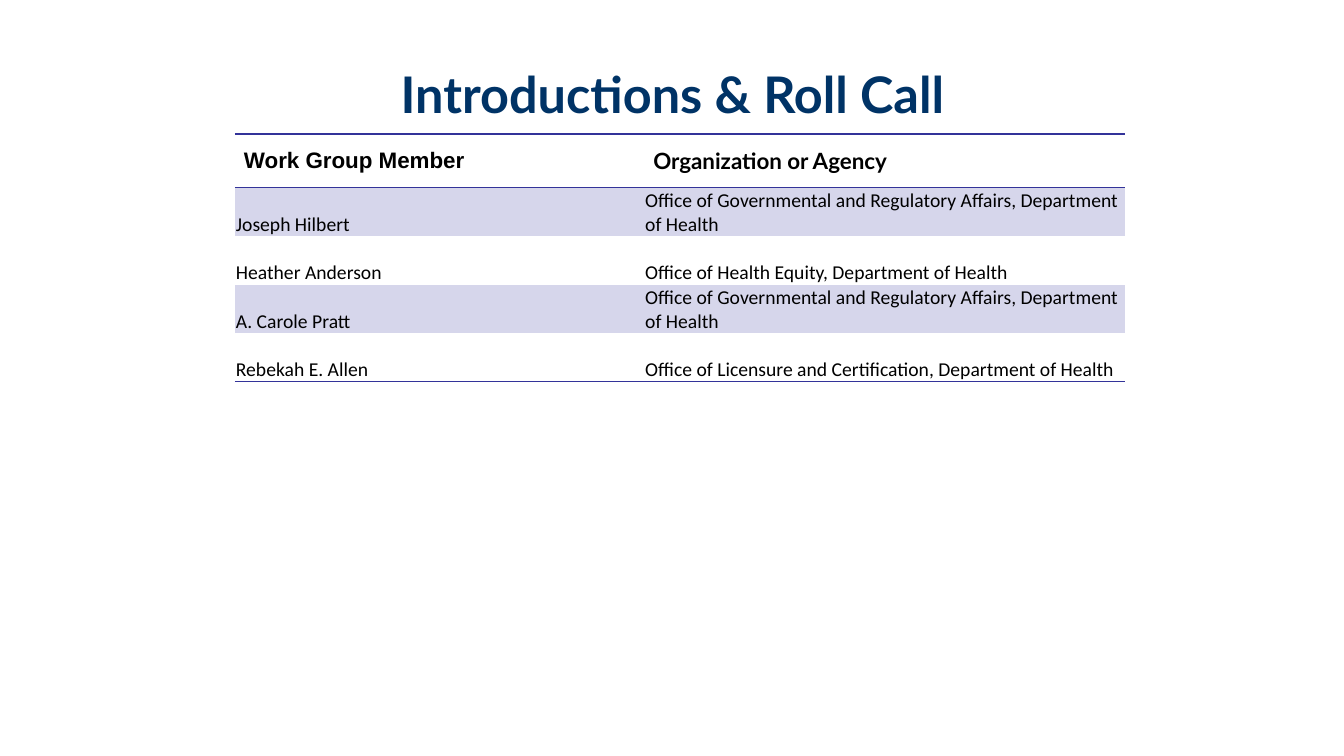
from lxml.etree import SubElement
from pptx import Presentation
from pptx.dml.color import RGBColor
from pptx.enum.text import MSO_ANCHOR as Anchor, PP_ALIGN as Align
from pptx.oxml import parse_xml
from pptx.oxml.ns import nsdecls, qn
from pptx.util import Inches, Pt

TITLE = "Introductions & Roll Call"
HEADINGS = [("Work Group Member", "Arial"), ("Organization or Agency", "Lato")]
MEMBERS = [
    ("Joseph Hilbert", "Office of Governmental and Regulatory Affairs, Department of Health"),
    ("Heather Anderson", "Office of Health Equity, Department of Health"),
    ("A. Carole Pratt", "Office of Governmental and Regulatory Affairs, Department of Health"),
    ("Rebekah E. Allen", "Office of Licensure and Certification, Department of Health"),
]
COLUMN_WIDTHS = (4.06, 4.77)
HEADING_HEIGHT, MEMBER_HEIGHT = 0.53, 0.48
TABLE_LEFT, TABLE_TOP = 2.33, 1.33
NAVY, RULE, BAND, BLACK = "003366", "333399", "D6D6EB", "000000"
NO_STYLE = "{2D5ABB26-0587-4C30-8999-92F81FD0307C}"


def color(value):
    return RGBColor.from_string(value)


def add_run(paragraph, text, font_name, size, font_color, bold=False):
    run = paragraph.add_run()
    run.text = text
    font = run.font
    font.name, font.size, font.bold = font_name, Pt(size), bold
    font.color.rgb = color(font_color)


def add_rules(cell, sides):
    """Draw one-point lines on the given sides ("T", "B") of a cell."""
    properties = cell._tc.get_or_add_tcPr()
    for position, side in enumerate(sides):
        line = parse_xml(f'<a:ln{side} {nsdecls("a")} w="{Pt(1)}"/>')
        fill = SubElement(line, qn("a:solidFill"))
        SubElement(fill, qn("a:srgbClr"), val=RULE)
        properties.insert(position, line)


def format_cell(cell, text, font_name, size, bold, anchor, margins, band):
    cell.vertical_anchor = anchor
    (cell.margin_left, cell.margin_top,
     cell.margin_right, cell.margin_bottom) = map(Inches, margins)
    if band:
        cell.fill.solid()
        cell.fill.fore_color.rgb = color(band)
    else:
        cell.fill.background()
    add_run(cell.text_frame.paragraphs[0], text, font_name, size, BLACK, bold)


def add_title(slide):
    title = slide.shapes.title
    title.left, title.top = Inches(0.67), Inches(0.3)
    title.width, title.height = Inches(12), Inches(1.25)
    title.text_frame.vertical_anchor = Anchor.MIDDLE
    paragraph = title.text_frame.paragraphs[0]
    paragraph.alignment = Align.CENTER
    add_run(paragraph, TITLE, "Lato", 36, NAVY, True)


def add_roll_call(slide):
    heights = [HEADING_HEIGHT] + [MEMBER_HEIGHT] * len(MEMBERS)
    table = slide.shapes.add_table(
        len(heights), len(COLUMN_WIDTHS), Inches(TABLE_LEFT), Inches(TABLE_TOP),
        Inches(sum(COLUMN_WIDTHS)), Inches(sum(heights))).table
    table._tbl.tblPr.find(qn("a:tableStyleId")).text = NO_STYLE
    for column, width in zip(table.columns, COLUMN_WIDTHS):
        column.width = Inches(width)
    for row, height in zip(table.rows, heights):
        row.height = Inches(height)

    for column, (heading, font_name) in enumerate(HEADINGS):
        cell = table.cell(0, column)
        format_cell(cell, heading, font_name, 16, True, Anchor.MIDDLE,
                    (0.09, 0.04, 0.09, 0.04), None)
        add_rules(cell, "TB")
    for row, member in enumerate(MEMBERS, start=1):
        for column, text in enumerate(member):
            cell = table.cell(row, column)
            format_cell(cell, text, "Calibri", 14, False, Anchor.BOTTOM,
                        (0.01, 0.01, 0.01, 0), BAND if row % 2 else None)
            if row == len(MEMBERS):
                add_rules(cell, "B")


def main():
    presentation = Presentation()
    presentation.slide_width, presentation.slide_height = Inches(13.33), Inches(7.5)
    slide = presentation.slides.add_slide(presentation.slide_layouts[5])
    add_title(slide)
    add_roll_call(slide)
    presentation.save("out.pptx")


if __name__ == "__main__":
    main()
